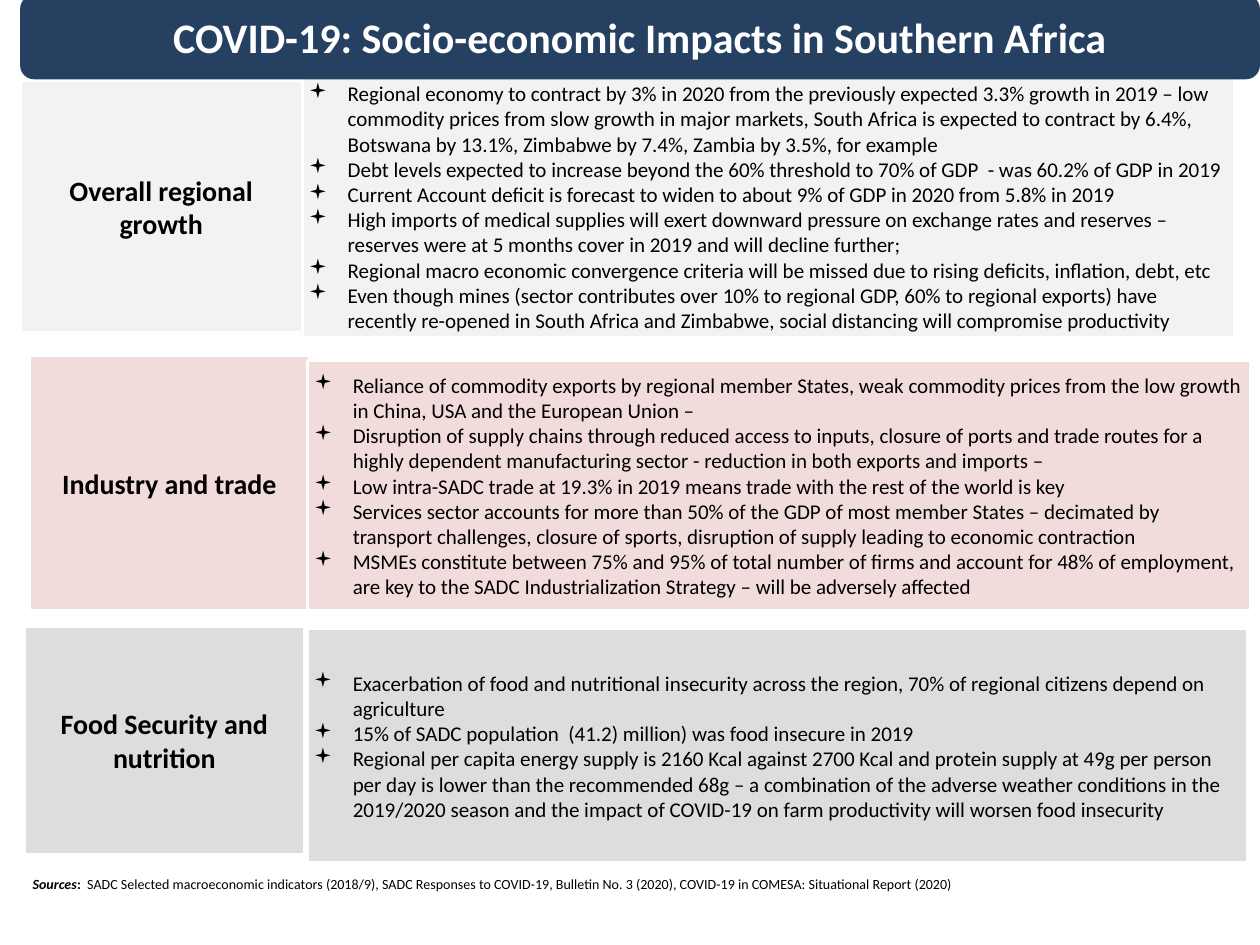
from lxml import etree
from pptx import Presentation
from pptx.dml.color import RGBColor
from pptx.enum.shapes import MSO_SHAPE
from pptx.enum.text import MSO_ANCHOR, PP_ALIGN
from pptx.oxml.ns import qn
from pptx.util import Inches, Pt

ROUNDED = MSO_SHAPE.ROUNDED_RECTANGLE
MIDDLE = MSO_ANCHOR.MIDDLE
LEFT, CENTER = PP_ALIGN.LEFT, PP_ALIGN.CENTER

FONT = "Calibri"
BLACK, WHITE, NAVY = "000000", "FFFFFF", "254061"
BULLET_INDENT = Inches(0.31)

# Each section: fill, label, label box, bullet box, bullets
SECTIONS = [
    ("F2F2F2", "Overall regional growth",
     (0.16, 0.64, 2.24, 2), (2.4, 0.6, 7.4, 2.08), [
         "Regional economy to contract by 3% in 2020 from the previously expected 3.3% growth in 2019 – low "
         "commodity prices from slow growth in major markets, South Africa is expected to contract by 6.4%, "
         "Botswana by 13.1%, Zimbabwe by 7.4%, Zambia by 3.5%, for example",
         "Debt levels expected to increase beyond the 60% threshold to 70% of GDP  - was 60.2% of GDP in 2019",
         "Current Account deficit is forecast to widen to about 9% of GDP in 2020 from 5.8% in 2019",
         "High imports of medical supplies will exert downward pressure on exchange rates and reserves – "
         "reserves were at 5 months cover in 2019 and will decline further;",
         "Regional macro economic convergence criteria will be missed due to rising deficits, inflation, debt, etc",
         "Even though mines (sector contributes over 10% to regional GDP, 60% to regional exports) have "
         "recently re-opened in South Africa and Zimbabwe, social distancing will compromise productivity",
     ]),
    ("F2DCDB", "Industry and trade",
     (0.23, 2.82, 2.23, 2.03), (2.44, 2.86, 7.49, 1.99), [
         "Reliance of commodity exports by regional member States, weak commodity prices from the low growth "
         "in China, USA and the European Union –",
         "Disruption of supply chains through reduced access to inputs, closure of ports and trade routes for a "
         "highly dependent manufacturing sector - reduction in both exports and imports –",
         "Low intra-SADC trade at 19.3% in 2019 means trade with the rest of the world is key",
         "Services sector accounts for more than 50% of the GDP of most member States – decimated by "
         "transport challenges, closure of sports, disruption of supply leading to economic contraction",
         "MSMEs constitute between 75% and 95% of total number of firms and account for 48% of employment, "
         "are key to the SADC Industrialization Strategy – will be adversely affected",
     ]),
    ("DDDDDD", "Food Security and nutrition",
     (0.19, 4.97, 2.23, 1.81), (2.44, 4.99, 7.46, 1.86), [
         "Exacerbation of food and nutritional insecurity across the region, 70% of regional citizens depend on "
         "agriculture",
         "15% of SADC population  (41.2) million) was food insecure in 2019",
         "Regional per capita energy supply is 2160 Kcal against 2700 Kcal and protein supply at 49g per person "
         "per day is lower than the recommended 68g – a combination of the adverse weather conditions in the "
         "2019/2020 season and the impact of COVID-19 on farm productivity will worsen food insecurity",
     ]),
]


def color(value):
    return RGBColor.from_string(value)


def set_font(font, size, text_color=BLACK, bold=False):
    font.name = FONT
    font.size = Pt(size)
    font.bold = bold
    font.color.rgb = color(text_color)


def add_bullet(paragraph):
    properties = paragraph._p.get_or_add_pPr()
    properties.set("marL", str(BULLET_INDENT))
    properties.set("indent", str(-BULLET_INDENT))
    etree.SubElement(properties, qn("a:buFont")).set("typeface", "Wingdings")
    etree.SubElement(properties, qn("a:buChar")).set("char", "▪")


def add_panel(slide, box, fill, lines, size, text_color=BLACK, bold=False,
              bulleted=False, inset=0.05, rounded=False):
    shape = slide.shapes.add_shape(ROUNDED, *map(Inches, box))
    shape.shadow.inherit = False
    shape.fill.solid()
    shape.fill.fore_color.rgb = color(fill)
    if rounded:
        shape.line.fill.background()
    else:
        shape.adjustments[0] = 0
        shape.line.color.rgb = color(WHITE)
        shape.line.width = Pt(2)

    frame = shape.text_frame
    frame.word_wrap = True
    frame.vertical_anchor = MIDDLE
    frame.margin_left = frame.margin_right = Inches(inset)
    frame.margin_top = frame.margin_bottom = Inches(inset)
    for index, line in enumerate(lines):
        paragraph = frame.add_paragraph() if index else frame.paragraphs[0]
        paragraph.text = line
        paragraph.alignment = LEFT if bulleted else CENTER
        if bulleted:
            add_bullet(paragraph)
        set_font(paragraph.font, size, text_color, bold)


def add_sources(slide):
    box = slide.shapes.add_textbox(Inches(0.16), Inches(6.9), Inches(7.52), Inches(0.24))
    box.text_frame.word_wrap = True
    paragraph = box.text_frame.paragraphs[0]
    parts = [
        ("Sources", True, True),
        (":", True, False),
        ("  SADC Selected macroeconomic indicators (2018/9), SADC Responses to COVID-19, "
         "Bulletin No. 3 (2020), COVID-19 in COMESA: Situational Report (2020)", False, False),
    ]
    for text, bold, italic in parts:
        run = paragraph.add_run()
        run.text = text
        set_font(run.font, 8, bold=bold)
        run.font.italic = italic


def main():
    presentation = Presentation()
    presentation.slide_width = Inches(10)
    presentation.slide_height = Inches(7.5)
    slide = presentation.slides.add_slide(presentation.slide_layouts[6])

    # Section labels with their bullets
    for fill, label, label_box, bullet_box, bullets in SECTIONS:
        add_panel(slide, label_box, fill, [label], 16, bold=True)
        add_panel(slide, bullet_box, fill, bullets, 12, bulleted=True)

    # Title banner, over the top edge of the first section
    add_panel(slide, (0.16, -0.04, 9.84, 0.67), NAVY,
              ["COVID-19: Socio-economic Impacts in Southern Africa"], 24,
              text_color=WHITE, bold=True, inset=0.1, rounded=True)

    # Footer
    add_sources(slide)
    presentation.save("out.pptx")


if __name__ == "__main__":
    main()
